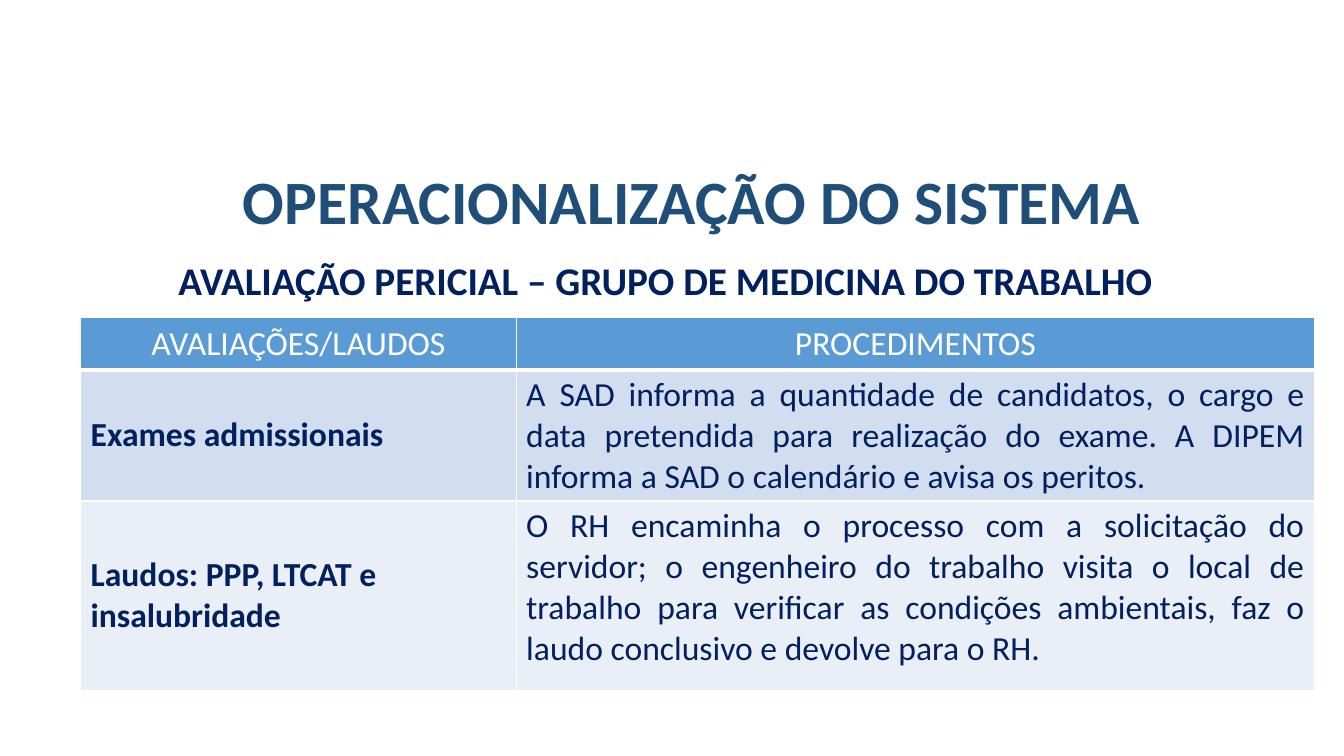
from lxml.etree import SubElement
from pptx import Presentation
from pptx.dml.color import RGBColor
from pptx.enum.text import MSO_ANCHOR, PP_ALIGN
from pptx.oxml.ns import qn
from pptx.util import Inches, Pt

WHITE = RGBColor(0xFF, 0xFF, 0xFF)
TITLE_BLUE = RGBColor(0x1F, 0x4E, 0x79)
NAVY = RGBColor(0x00, 0x20, 0x60)
HEADER_BLUE = RGBColor(0x5B, 0x9B, 0xD5)
BAND_DARK = RGBColor(0xD2, 0xDE, 0xEF)
BAND_LIGHT = RGBColor(0xEA, 0xEF, 0xF7)

WIDTH, HEIGHT = Inches(13.33), Inches(7.5)
COLUMNS = (4.32, 7.92)
ROWS = (0.52, 1.23, 1.88)
FILLS = (HEADER_BLUE, BAND_DARK, BAND_LIGHT)
CONTENT = (
    ("AVALIAÇÕES/LAUDOS", "PROCEDIMENTOS"),
    ("Exames admissionais",
     "A SAD informa a quantidade de candidatos, o cargo e data pretendida para "
     "realização do exame. A DIPEM informa a SAD o calendário e avisa os peritos."),
    ("Laudos: PPP, LTCAT e insalubridade",
     "O RH encaminha o processo com a solicitação do servidor; o engenheiro do "
     "trabalho visita o local de trabalho para verificar as condições ambientais, "
     "faz o laudo conclusivo e devolve para o RH."),
)


def write_text(frame, text, color, align, **font_format):
    para = frame.paragraphs[0]
    para.alignment = align
    span = para.add_run()
    span.text = text
    span.font.color.rgb = color
    for name, value in {"name": "Calibri", **font_format}.items():
        setattr(span.font, name, value)
    return para


def add_heading(page, text, left, top, height, anchor, color, size):
    box = page.shapes.add_textbox(
        int(WIDTH * left), int(HEIGHT * top), int(WIDTH * 0.85), int(HEIGHT * height))
    frame = box.text_frame
    frame.word_wrap = True
    frame.vertical_anchor = anchor
    para = write_text(frame, text, color, PP_ALIGN.CENTER, size=Pt(size), bold=True)
    para.line_spacing = 0.9


def set_borders(cell, bottom_width):
    properties = cell._tc.get_or_add_tcPr()
    for side, width in {"L": 1, "R": 1, "T": 1, "B": bottom_width}.items():
        line = SubElement(properties, qn(f"a:ln{side}"), w=str(Pt(width)))
        fill = SubElement(line, qn("a:solidFill"))
        SubElement(fill, qn("a:srgbClr"), val=str(WHITE))


def fill_cell(cell, text, row, column):
    header = row == 0
    label = column == 0
    set_borders(cell, 3 if header else 1)
    cell.fill.solid()
    cell.fill.fore_color.rgb = FILLS[row]
    cell.vertical_anchor = MSO_ANCHOR.MIDDLE if header or label else MSO_ANCHOR.TOP
    body_align = PP_ALIGN.LEFT if label else PP_ALIGN.JUSTIFY
    write_text(cell.text_frame, text, WHITE if header else NAVY,
               PP_ALIGN.CENTER if header else body_align,
               size=Pt(24), bold=label and not header)


def add_procedures_table(page, left, top):
    table = page.shapes.add_table(
        len(ROWS), len(COLUMNS), int(WIDTH * left), int(HEIGHT * top),
        Inches(sum(COLUMNS)), Inches(sum(ROWS))).table
    for column, width in zip(table.columns, COLUMNS):
        column.width = Inches(width)
    for row, height in zip(table.rows, ROWS):
        row.height = Inches(height)
    for row, texts in enumerate(CONTENT):
        for column, text in enumerate(texts):
            fill_cell(table.cell(row, column), text, row, column)


def main():
    deck = Presentation()
    deck.slide_width, deck.slide_height = WIDTH, HEIGHT
    page = deck.slides.add_slide(deck.slide_layouts[6])
    add_heading(page, "OPERACIONALIZAÇÃO DO SISTEMA", 0.09, 0.21, 0.12,
                MSO_ANCHOR.MIDDLE, TITLE_BLUE, 44)
    add_heading(page, "AVALIAÇÃO PERICIAL – GRUPO DE MEDICINA DO TRABALHO", 0.07, 0.34, 0.6,
                MSO_ANCHOR.TOP, NAVY, 28)
    add_procedures_table(page, 0.06, 0.42)
    deck.save("out.pptx")


if __name__ == "__main__":
    main()
